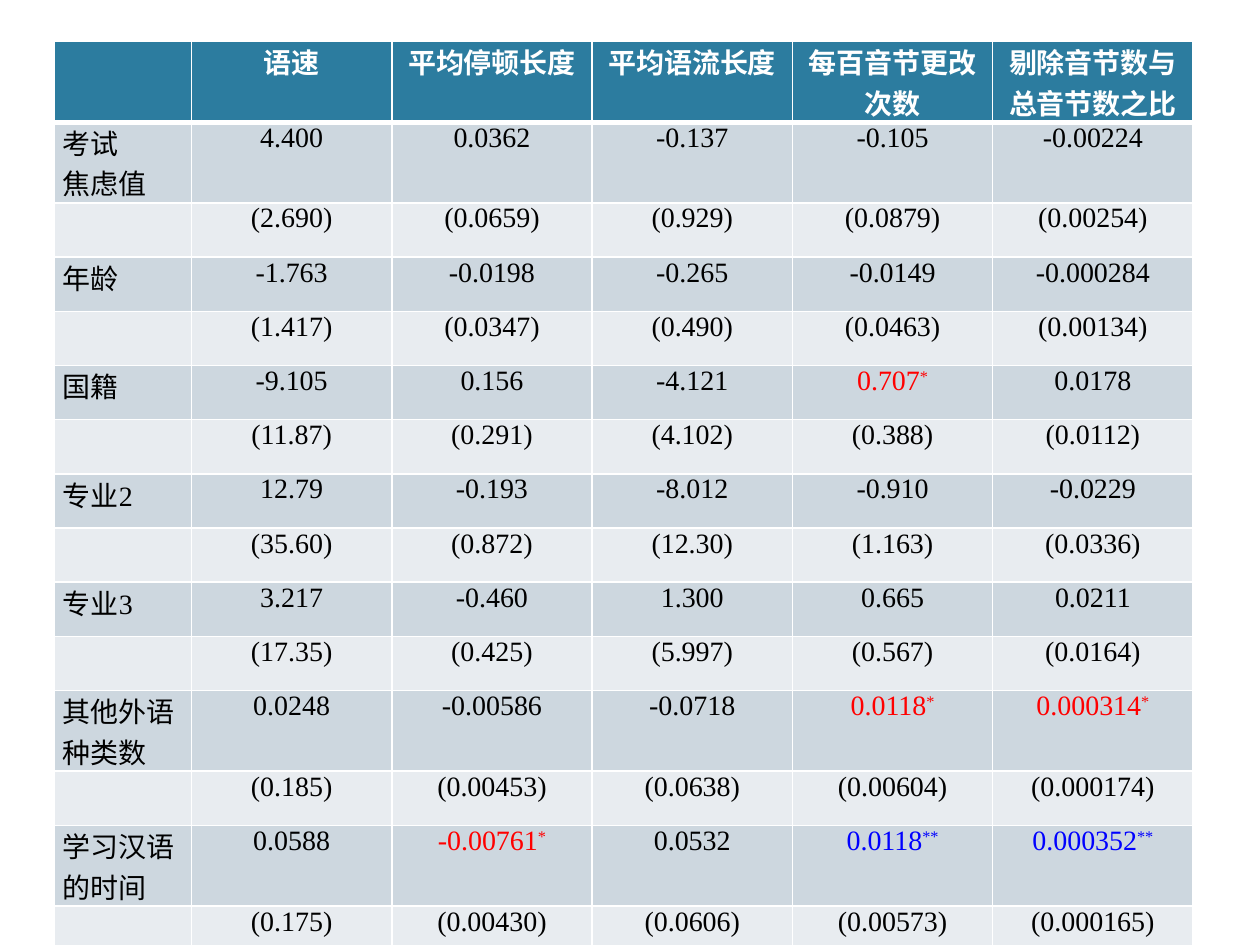
from lxml.etree import SubElement
from pptx import Presentation
from pptx.dml.color import RGBColor
from pptx.enum.text import PP_ALIGN as Align
from pptx.oxml.ns import qn
from pptx.util import Inches, Pt

CJK, SERIF, NUMBER = "Noto Sans CJK SC", "Cambria", "Times New Roman"
HEADER_FILL, ROW_FILLS = "2C7C9F", ("E8ECF0", "CDD7DF")
STAR_COLORS = {"": "000000", "*": "FF0000", "**": "0000FF"}
CELL_FORMAT = {"margin_left": Inches(0.07), "margin_right": Inches(0.07),
               "margin_top": 0, "margin_bottom": 0}

HEADERS = [("", CJK), ("语速", CJK), ("平均停顿长度", CJK), ("平均语流长度", CJK),
           ("每百音节更改次数", SERIF), ("剔除音节数与总音节数之比", SERIF)]

# Variable label, label font, coefficients, standard errors
VARIABLES = [
    ("考试\n焦虑值", SERIF, "4.400 0.0362 -0.137 -0.105 -0.00224",
     "(2.690) (0.0659) (0.929) (0.0879) (0.00254)"),
    ("年龄", CJK, "-1.763 -0.0198 -0.265 -0.0149 -0.000284",
     "(1.417) (0.0347) (0.490) (0.0463) (0.00134)"),
    ("国籍", SERIF, "-9.105 0.156 -4.121 0.707* 0.0178",
     "(11.87) (0.291) (4.102) (0.388) (0.0112)"),
    ("专业2", CJK, "12.79 -0.193 -8.012 -0.910 -0.0229",
     "(35.60) (0.872) (12.30) (1.163) (0.0336)"),
    ("专业3", CJK, "3.217 -0.460 1.300 0.665 0.0211",
     "(17.35) (0.425) (5.997) (0.567) (0.0164)"),
    ("其他外语种类数", CJK, "0.0248 -0.00586 -0.0718 0.0118* 0.000314*",
     "(0.185) (0.00453) (0.0638) (0.00604) (0.000174)"),
    ("学习汉语的时间", CJK, "0.0588 -0.00761* 0.0532 0.0118** 0.000352**",
     "(0.175) (0.00430) (0.0606) (0.00573) (0.000165)"),
]


def add_run(paragraph, text, font_name, color, bold=False, baseline=None):
    run = paragraph.add_run()
    run.text = text
    for name, value in {"name": font_name, "size": Pt(16), "bold": bold}.items():
        setattr(run.font, name, value)
    run.font.color.rgb = RGBColor.from_string(color)
    properties = run.font._element
    if font_name != NUMBER:
        SubElement(properties, qn("a:ea"), typeface=CJK)
    if baseline:
        properties.set("baseline", baseline)


def style_cell(cell, fill, top=1, bottom=1):
    for name, value in CELL_FORMAT.items():
        setattr(cell, name, value)
    properties = cell._tc.get_or_add_tcPr()
    for side, width in {"L": 1, "R": 1, "T": top, "B": bottom}.items():
        line = SubElement(properties, qn(f"a:ln{side}"), w=str(Pt(width)))
        SubElement(SubElement(line, qn("a:solidFill")), qn("a:srgbClr"), val="FFFFFF")
    cell.fill.solid()
    cell.fill.fore_color.rgb = RGBColor.from_string(fill)


presentation = Presentation()
presentation.slide_width, presentation.slide_height = Inches(10), Inches(7.5)
slide = presentation.slides.add_slide(presentation.slide_layouts[6])

# Table grid: one header row, then two rows for each variable
row_count = 1 + 2 * len(VARIABLES)
table = slide.shapes.add_table(row_count, len(HEADERS), Inches(0.43), Inches(0.33),
                               Inches(9.04), Inches(6.97)).table
for index, column in enumerate(table.columns):
    column.width = Inches(1.59 if index else 1.09)
for index, row in enumerate(table.rows):
    row.height = Inches(0.57 if index in (0, 11, 13) else 0.43)

# Header row
for index, (text, font_name) in enumerate(HEADERS):
    cell = table.cell(0, index)
    style_cell(cell, HEADER_FILL, bottom=3)
    if text:
        paragraph = cell.text_frame.paragraphs[0]
        paragraph.alignment = Align.CENTER
        add_run(paragraph, text, font_name, "FFFFFF", bold=True)

# Body fills and borders
for row_index in range(1, row_count):
    for column_index in range(len(HEADERS)):
        style_cell(table.cell(row_index, column_index), ROW_FILLS[row_index % 2],
                   top=3 if row_index == 1 else 1)

# Labels, with any digit in the number font, and values with raised stars
for index, (label, font_name, coefficients, errors) in enumerate(VARIABLES):
    row_index = 1 + 2 * index
    frame = table.cell(row_index, 0).text_frame
    for line_index, text in enumerate(label.split("\n")):
        paragraph = frame.add_paragraph() if line_index else frame.paragraphs[0]
        words = text.rstrip("0123456789")
        add_run(paragraph, words, font_name, "000000")
        if words != text:
            add_run(paragraph, text[len(words):], NUMBER, "000000")
    for offset, values in enumerate((coefficients, errors)):
        for column_index, value in enumerate(values.split(), 1):
            paragraph = table.cell(row_index + offset, column_index).text_frame.paragraphs[0]
            paragraph.alignment = Align.CENTER
            number = value.rstrip("*")
            stars = value[len(number):]
            add_run(paragraph, number, NUMBER, STAR_COLORS[stars])
            if stars:
                add_run(paragraph, stars, NUMBER, STAR_COLORS[stars], baseline="30000")

presentation.save("out.pptx")
